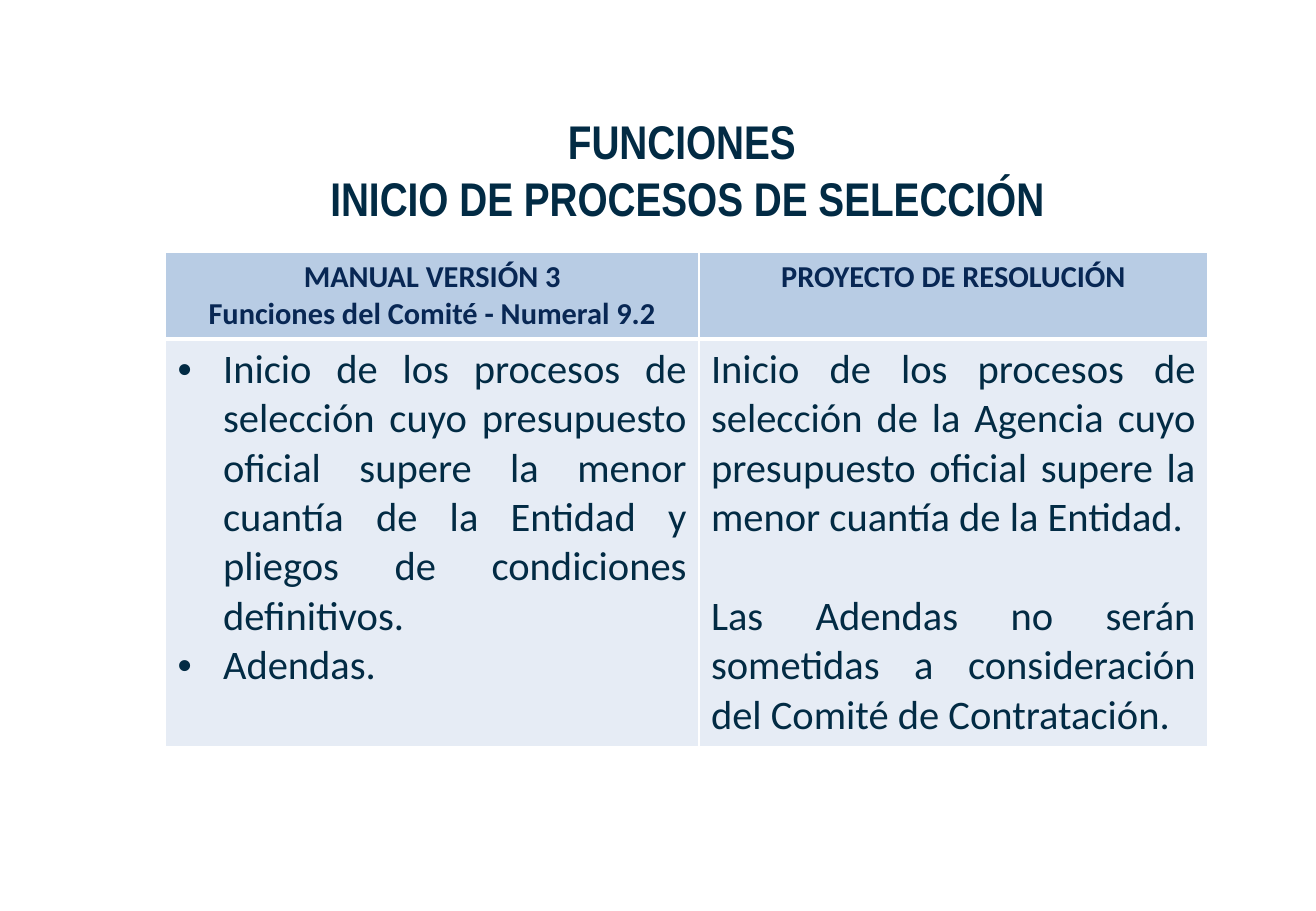
from lxml import etree
from pptx import Presentation
from pptx.dml.color import RGBColor
from pptx.enum import text
from pptx.oxml import ns
from pptx.util import Cm, Pt

COLORS = {
    "title": "022B44",
    "header_text": "082754",
    "header_fill": "B8CCE4",
    "body_fill": "E6ECF5",
    "border": "FFFFFF",
}
HEADERS = [
    ["MANUAL VERSIÓN 3", "Funciones del Comité - Numeral 9.2"],
    ["PROYECTO DE RESOLUCIÓN"],
]
MANUAL_ITEMS = [
    "Inicio de los procesos de selección cuyo presupuesto oficial supere la "
    "menor cuantía de la Entidad y pliegos de condiciones definitivos.",
    "Adendas.",
]
RESOLUTION_ITEMS = [
    "Inicio de los procesos de selección de la Agencia cuyo presupuesto "
    "oficial supere la menor cuantía de la Entidad.",
    "Las Adendas no serán sometidas a consideración del Comité de Contratación.",
]


def format_paragraph(paragraph, font_name, size, color, bold, alignment):
    paragraph.alignment = alignment
    for run in paragraph.runs:
        run.font.name = font_name
        run.font.size = Pt(size)
        run.font.bold = bold
        run.font.color.rgb = RGBColor.from_string(COLORS[color])


def add_bullet(paragraph):
    properties = paragraph._p.get_or_add_pPr()
    properties.set("marL", str(Cm(0.95)))
    properties.set("indent", str(-Cm(0.95)))
    etree.SubElement(properties, ns.qn("a:buFont"), typeface="Arial")
    etree.SubElement(properties, ns.qn("a:buChar"), char="•")


def set_borders(cell, widths):
    properties = cell._tc.get_or_add_tcPr()
    for index, (side, width) in enumerate(widths.items()):
        line = etree.Element(ns.qn(f"a:ln{side}"), w=str(Pt(width)))
        fill = etree.SubElement(line, ns.qn("a:solidFill"))
        etree.SubElement(fill, ns.qn("a:srgbClr"), val=COLORS["border"])
        properties.insert(index, line)


def fill_cell(cell, items, header=False, bullets=False, gap=0):
    cell.fill.solid()
    fill = "header_fill" if header else "body_fill"
    cell.fill.fore_color.rgb = RGBColor.from_string(COLORS[fill])
    set_borders(cell, {"L": 1, "R": 1, "T": 1 if header else 3, "B": 3 if header else 1})
    cell.text_frame.text = "\n".join(items)
    for index, paragraph in enumerate(cell.text_frame.paragraphs):
        if gap and index:
            paragraph.space_before = Pt(gap)
        if bullets:
            add_bullet(paragraph)
        if header:
            format_paragraph(paragraph, "Calibri", 18, "header_text", True, text.PP_ALIGN.CENTER)
        else:
            format_paragraph(paragraph, "Calibri", 24, "title", False, text.PP_ALIGN.JUSTIFY)


def add_title(slide):
    title = slide.shapes.title
    title.left, title.top, title.width, title.height = Cm(2.67), Cm(1.73), Cm(23.39), Cm(3.6)
    title.text_frame.text = "FUNCIONES \vINICIO DE PROCESOS DE SELECCIÓN"
    title.text_frame.vertical_anchor = text.MSO_ANCHOR.MIDDLE
    format_paragraph(title.text_frame.paragraphs[0], "Arial Narrow", 28, "title", True,
                     text.PP_ALIGN.CENTER)


def add_comparison(slide):
    frame = slide.shapes.add_table(2, 2, Cm(3.46), Cm(5.28), Cm(21.79), Cm(10.31))
    table = frame.table
    for column, width in zip(table.columns, (11.15, 10.64)):
        column.width = Cm(width)
    for row, height in zip(table.rows, (1.8, 8.51)):
        row.height = Cm(height)
    for column, items in enumerate(HEADERS):
        fill_cell(table.cell(0, column), items, header=True)
    fill_cell(table.cell(1, 0), MANUAL_ITEMS, bullets=True)
    fill_cell(table.cell(1, 1), RESOLUTION_ITEMS, gap=29.3)


def main():
    presentation = Presentation()
    presentation.slide_width, presentation.slide_height = Cm(27.51), Cm(19.05)
    # Title Only layout
    slide = presentation.slides.add_slide(presentation.slide_layouts[5])
    # Heading
    add_title(slide)
    # Manual against draft resolution
    add_comparison(slide)
    presentation.save("out.pptx")


if __name__ == "__main__":
    main()
